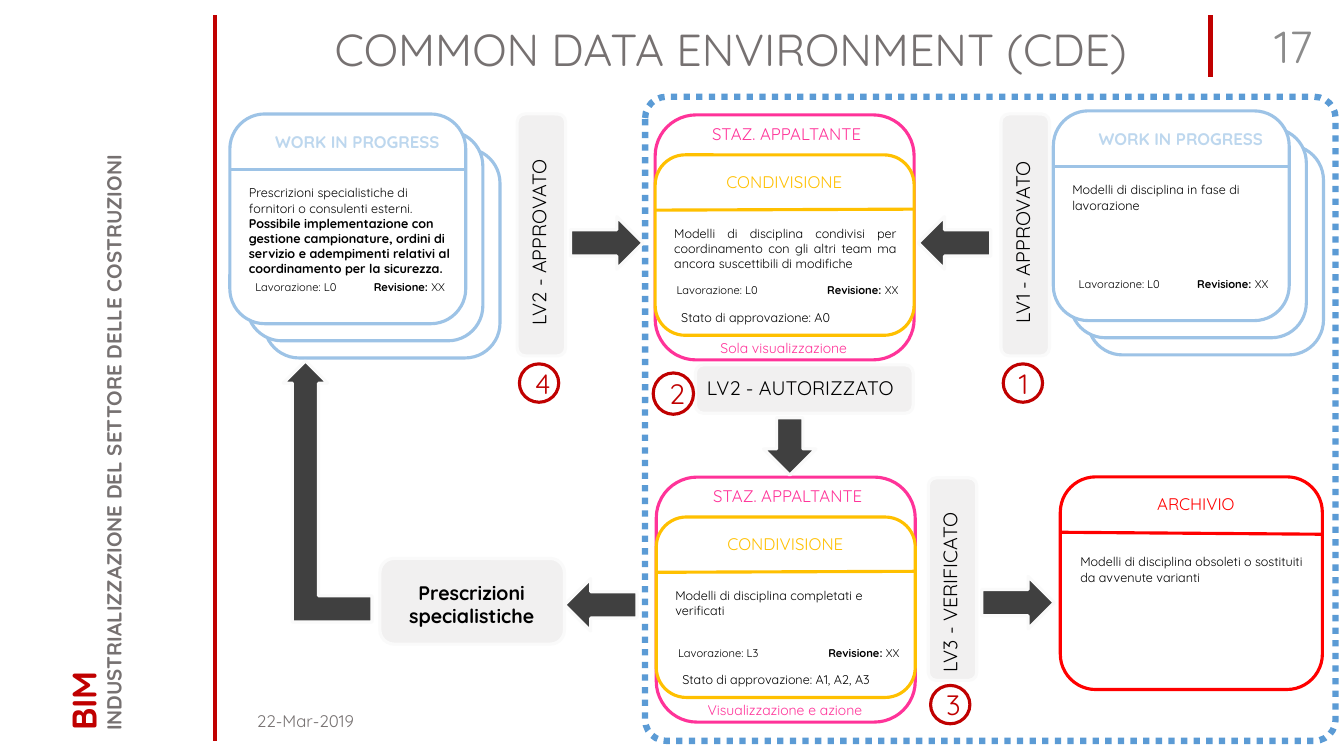
import pptx
import pptx.util
import pptx.dml.color
import pptx.enum.dml
import pptx.enum.shapes
import pptx.enum.text
import pptx.oxml.ns
import lxml.etree

Pt = pptx.util.Pt
SHAPE = pptx.enum.shapes.MSO_SHAPE
ALIGN = pptx.enum.text.PP_ALIGN
ANCHOR = pptx.enum.text.MSO_ANCHOR

COLORS = {
    "black": "000000", "white": "FFFFFF", "grey": "767171", "number": "8C8C8C",
    "dark_red": "C00000", "red": "FF0000", "blue": "9DC3E6", "pale_blue": "BDD7EE",
    "frame": "5B9BD5", "pink": "FF3399", "yellow": "FFC000", "arrow": "404040",
    "panel": "F1F0F0", "edge": "FAFAFA",
}


def rgb(name):
    return pptx.dml.color.RGBColor.from_string(COLORS[name])


class CdeSlide:
    font = "Quicksand"
    line_width = 2.25

    def __init__(self, prs):
        self.slide = prs.slides.add_slide(prs.slide_layouts[5])

    def add_run(self, p, text, size, color, bold=False):
        r = p.add_run()
        r.text = text
        r.font.name = self.font
        r.font.size = Pt(size)
        r.font.bold = bold
        r.font.color.rgb = rgb(color)

    def fill_text(self, tf, paragraphs, size, color, align=ALIGN.LEFT, bold=False):
        """Write paragraphs; each is a string or a list of (text, bold) runs."""
        tf.word_wrap = True
        for i, runs in enumerate(paragraphs):
            p = tf.paragraphs[0] if i == 0 else tf.add_paragraph()
            p.alignment = align
            if isinstance(runs, str):
                runs = [(runs, bold)]
            for text, run_bold in runs:
                self.add_run(p, text, size, color, run_bold)

    def title(self, text, x, y, w, h):
        sp = self.slide.shapes.title
        sp.left, sp.top, sp.width, sp.height = Pt(x), Pt(y), Pt(w), Pt(h)
        tf = sp.text_frame
        tf.auto_size = pptx.enum.text.MSO_AUTO_SIZE.NONE
        tf.vertical_anchor = ANCHOR.MIDDLE
        self.fill_text(tf, [text], 32, "grey")

    def text(self, paragraphs, x, y, w, h, size, color="black", align=ALIGN.CENTER,
             bold=False, rotation=0, anchor=ANCHOR.TOP):
        sp = self.slide.shapes.add_textbox(Pt(x), Pt(y), Pt(w), Pt(h))
        sp.rotation = rotation
        sp.text_frame.vertical_anchor = anchor
        self.fill_text(sp.text_frame, paragraphs, size, color, align, bold)
        return sp

    def shape(self, kind, x, y, w, h, line, fill=None, rotation=0):
        sp = self.slide.shapes.add_shape(kind, Pt(x), Pt(y), Pt(w), Pt(h))
        sp.shadow.inherit = False
        sp.rotation = rotation
        if fill:
            sp.fill.solid()
            sp.fill.fore_color.rgb = rgb(fill)
        else:
            sp.fill.background()
        sp.line.color.rgb = rgb(line)
        sp.line.width = Pt(self.line_width)
        return sp

    def box(self, x, y, w, h, line, fill=None):
        return self.shape(SHAPE.ROUNDED_RECTANGLE, x, y, w, h, line, fill)

    def panel(self, x, y, w, h):
        return self.box(x, y, w, h, "edge", "panel")

    def arrow(self, x, y, w=51.8, h=37.4, rotation=0):
        self.shape(SHAPE.RIGHT_ARROW, x, y, w, h, "edge", "arrow", rotation)

    def line(self, x1, y1, x2, y2, color, width=line_width):
        cx = self.slide.shapes.add_connector(
            pptx.enum.shapes.MSO_CONNECTOR.STRAIGHT, Pt(x1), Pt(y1), Pt(x2), Pt(y2))
        cx.line.color.rgb = rgb(color)
        cx.line.width = Pt(width)
        lxml.etree.SubElement(cx._element.spPr, pptx.oxml.ns.qn("a:effectLst"))

    def badge(self, number, x, y, w=28.1, h=27.4):
        sp = self.shape(SHAPE.OVAL, x, y, w, h, "dark_red")
        sp.text_frame.vertical_anchor = ANCHOR.MIDDLE
        self.fill_text(sp.text_frame, [number], 20, "dark_red", ALIGN.CENTER)

    def gate(self, number, label, x, y, h, length, badge_y, align=ALIGN.CENTER):
        """Upright approval bar with its label read upwards and a badge below."""
        self.panel(x, y, 34.6, h)
        self.text([label], x + 15.5 - length / 2, y + h / 2 - 6.9, length, 24.5, 14,
                  align=align, rotation=270)
        self.badge(number, x + 1.6, badge_y)

    def status(self, level, x, y, revision_dx):
        self.text([f"Lavorazione: {level}"], x, y, 88.6, 17.3, 8)
        self.text([[("Revisione: ", True), ("XX", False)]], x + revision_dx, y, 80.6, 17.3, 8)

    def work_card(self, x, y, body):
        w, h, step = 168.5, 149.8, 12.24
        for i in (2, 1, 0):
            self.box(x + i * step, y + i * step, w, h, "blue", None if i == 2 else "white")
        self.text(["WORK IN PROGRESS"], x + 17.3, y + 9, 147.6, 21.6, 12, "pale_blue", bold=True)
        self.line(x, y + 39.6, x + w, y + 39.6, "blue")
        self.text(body, x + 6.5, y + 47.5, 158.4, 72, 9, align=ALIGN.LEFT)
        self.status("L0", x + 2.9, y + 115.5, 85)

    def shared_card(self, x, y, body, align, level, approval, access):
        w = 185
        self.box(x, y, w, 175, "pink")
        self.box(x, y + 28.5, w, 128.9, "yellow", "white")
        self.text(["STAZ. APPALTANTE"], x + 20.5, y + 2.9, 146.9, 21.6, 12, "pink")
        self.text(["CONDIVISIONE"], x + 17.3, y + 37.1, 149.8, 21.6, 12, "yellow")
        self.line(x, y + 68, x + w, y + 67.3, "yellow")
        self.text([body], x + 6.5, y + 75.6, 172.8, 40.3, 9, align=align)
        self.status(level, x, y + 117, 108)
        self.text([f"Stato di approvazione: {approval}"], x + 11.5, y + 135.7, 203, 18, 9,
                  align=ALIGN.LEFT)
        self.text([access], x + 3.6, y + 157, 176.4, 19.4, 10, "pink")


def main():
    prs = pptx.Presentation()
    prs.slide_width, prs.slide_height = Pt(960), Pt(540)
    s = CdeSlide(prs)

    # Page furniture
    s.title("COMMON DATA ENVIRONMENT (CDE)", 231.8, 18, 628.6, 33.1)
    side = s.text([], -151.2, 284.4, 428.4, 61.2, 14.6, rotation=270, anchor=ANCHOR.BOTTOM)
    s.fill_text(side.text_frame, ["BIM"], 24.4, "dark_red", bold=True)
    p = side.text_frame.add_paragraph()
    s.add_run(p, "INDUSTRIALIZZAZIONE DEL SETTORE DELLE COSTRUZIONI", 14.6, "grey", True)
    for p in side.text_frame.paragraphs:
        p.line_spacing = 0.9
    s.line(153.4, 10.8, 153.4, 529.2, "dark_red", 3)
    s.line(864.7, 10.8, 864.7, 54.7, "dark_red", 3)
    s.text(["17"], 864.7, 10.8, 79.9, 43.2, 32, "number", ALIGN.RIGHT, anchor=ANCHOR.MIDDLE)
    s.text(["22-Mar-2019"], 176.4, 500.4, 89.3, 28.8, 12, "grey", ALIGN.LEFT,
           anchor=ANCHOR.MIDDLE)

    # Shared environment frame
    frame = s.box(460.8, 69.1, 493.2, 460.1, "frame")
    frame.adjustments[0] = 0.033
    frame.line.width = Pt(4.5)
    frame.line.dash_style = pptx.enum.dml.MSO_LINE.ROUND_DOT

    # Cards
    s.work_card(164.2, 81.4, [
        "Prescrizioni specialistiche di fornitori o consulenti esterni.",
        [("Possibile implementazione con gestione campionature, ordini di servizio e "
          "adempimenti relativi al coordinamento per la sicurezza.", True)]])
    s.work_card(752.4, 79.2, ["Modelli di disciplina in fase di lavorazione"])
    s.shared_card(468, 82.1, "Modelli di disciplina condivisi per coordinamento con gli altri "
                  "team ma ancora suscettibili di modifiche", ALIGN.JUSTIFY,
                  "L0", "A0", "Sola visualizzazione")
    s.shared_card(468.8, 340.8, "Modelli di disciplina completati e verificati", ALIGN.LEFT,
                  "L3", "A1, A2, A3", "Visualizzazione e azione")
    s.box(757.4, 340.6, 187.2, 151.9, "red", "white")
    s.text(["ARCHIVIO"], 774.7, 349.2, 159.1, 21.6, 12, "red")
    s.line(757.4, 380.2, 944.6, 381.6, "red")
    s.text(["Modelli di disciplina obsoleti o sostituiti da avvenute varianti"],
           764.6, 392.4, 182.9, 28.8, 9, align=ALIGN.LEFT)

    # Approval gates
    s.gate("4", "LV2 - APPROVATO", 369.4, 81.4, 172.8, 166.3, 259.9)
    s.gate("1", "LV1 - APPROVATO", 715, 81.4, 172.8, 166.3, 259.9)
    s.gate("3", "LV3 - VERIFICATO", 663.1, 341.3, 144.7, 137.5, 489.6, ALIGN.LEFT)
    s.panel(496.8, 260.6, 155.5, 34.6)
    s.text(["LV2 - AUTORIZZATO"], 496.8, 265, 149.8, 25.2, 14)
    s.badge("2", 466.6, 266.4, 28.8, 29.5)
    s.panel(271.4, 398.9, 131.8, 61.2)
    s.text(["Prescrizioni", "specialistiche"], 274.3, 411.1, 125.3, 41, 14, bold=True)

    # Flow arrows
    s.arrow(407.5, 154.8)
    s.arrow(655.9, 154.8, rotation=180)
    s.arrow(543.6, 300.2, 41, rotation=90)
    s.arrow(403.2, 413.3, rotation=180)
    s.arrow(701.3, 411.8)
    bent = s.shape(SHAPE.BENT_UP_ARROW, 202.3, 257.8, 63.4, 186.5, "edge", "arrow")
    bent.adjustments[0] = 0.295
    bent._element.spPr.xfrm.set("flipH", "1")

    prs.save("out.pptx")


if __name__ == "__main__":
    main()
